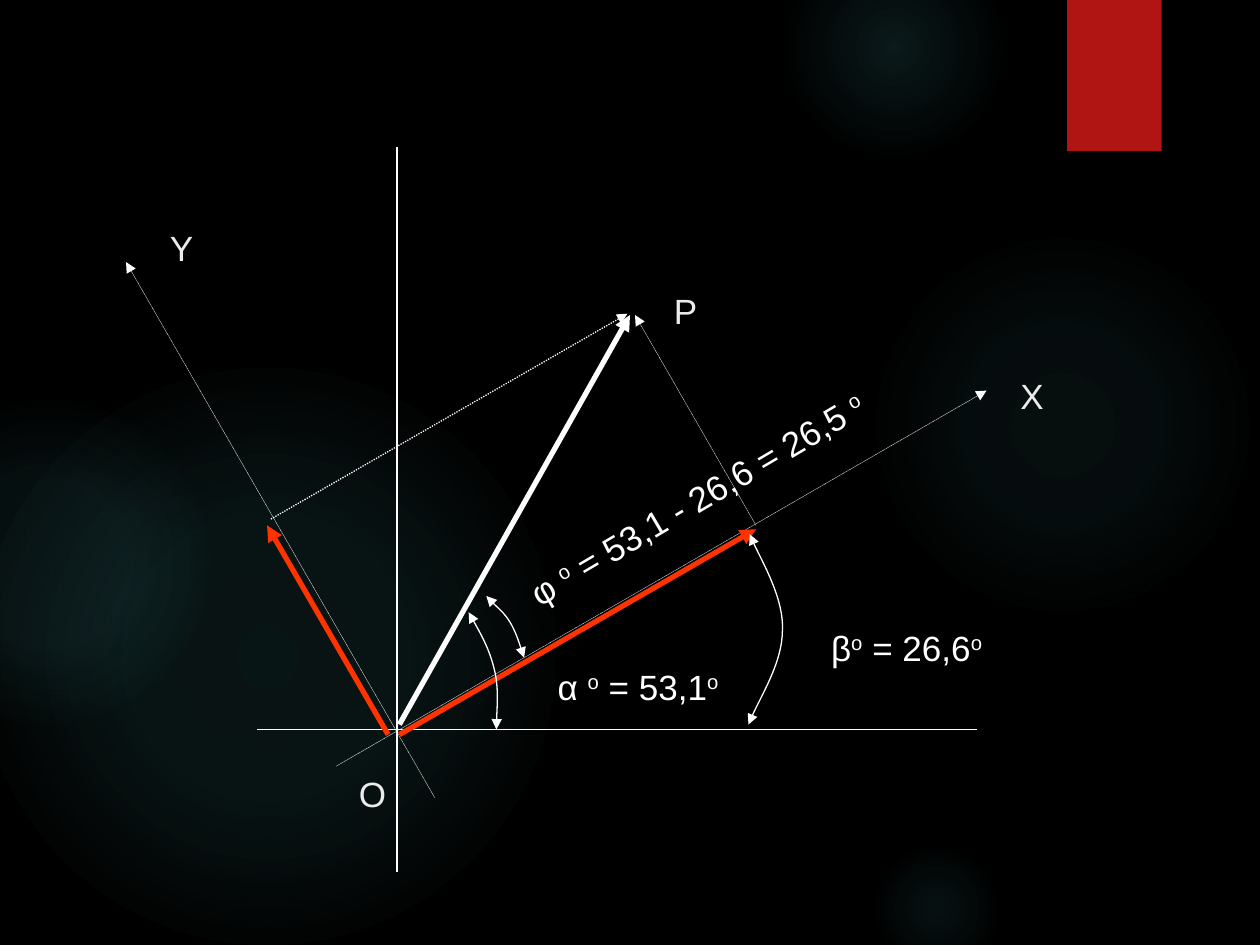
from lxml import etree
from pptx import Presentation
from pptx.dml.color import RGBColor
from pptx.enum.dml import MSO_LINE
from pptx.enum.shapes import MSO_CONNECTOR, MSO_SHAPE
from pptx.enum.text import MSO_AUTO_SIZE, PP_ALIGN
from pptx.oxml import parse_xml
from pptx.oxml.ns import nsdecls, qn
from pptx.util import Inches, Pt

OVAL, RECTANGLE = MSO_SHAPE.OVAL, MSO_SHAPE.RECTANGLE
STRAIGHT = MSO_CONNECTOR.STRAIGHT
DOTTED = MSO_LINE.ROUND_DOT
FIT_SHAPE = MSO_AUTO_SIZE.SHAPE_TO_FIT_TEXT
JUSTIFY = PP_ALIGN.JUSTIFY

COLORS = {"night": "000000", "glow": "50B9C1", "tab": "B01513",
          "white": "FFFFFF", "label": "EBEBEB", "component": "FF3300"}

# Slide grid: 100 columns by 75 rows
COLUMNS, ROWS, CELL = 100, 75, 0.1

# Glows: left, top, diameter, then (position, opacity) stops in percent
GLOWS = [
    (68.9, 18.3, 30.8, [(0, 7), (36, 6), (69, 0)]),
    (62.2, -5, 17.5, [(0, 14), (36, 7), (73, 0)]),
    (68.9, 66.7, 10.8, [(0, 9), (36, 5), (66, 0)]),
    (-1.7, 29.2, 45.8, [(0, 11), (36, 10), (75, 0)]),
    (-9.2, 31.7, 25.8, [(0, 8), (36, 8), (72, 0)]),
]

# Line styles: colour, width in points, dash
STYLES = {
    "rotated axis": ("white", 0.25, DOTTED),
    "projection": ("white", 0.75, DOTTED),
    "fixed axis": ("white", 0.75, None),
    "vector": ("white", 3, None),
    "component": ("component", 3, None),
}

# Lines: style, start, end, whether the end has an arrowhead
LINES = [
    ("rotated axis", (34.5, 63.3), (10, 20.8), True),
    ("rotated axis", (26.7, 60.8), (78.3, 31), True),
    ("vector", (31.7, 57.5), (50, 25), True),
    ("fixed axis", (31.5, 11.7), (31.5, 69.2), False),
    ("fixed axis", (20.4, 57.9), (77.5, 57.9), False),
    ("projection", (21.5, 41.2), (49.8, 24.9), True),
    ("rotated axis", (60, 41.7), (50.4, 25), True),
    ("component", (31.7, 58.3), (60, 42), True),
    ("component", (30.8, 58.3), (21.2, 41.7), True),
]

# Angle arcs: start point, then three points for each curve
ARCS = [
    [(37.2, 48.6), (37.6, 49.3), (38.8, 51.4), (39.2, 53),
     (39.6, 54.5), (39.4, 56.8), (39.4, 57.9)],
    [(59.5, 42.4), (60, 43.7), (62.2, 47.5), (62.1, 50),
     (62.1, 52.5), (60, 55.9), (59.4, 57.5)],
    [(38.6, 47.3), (38.9, 47.7), (40, 48.6), (40.5, 49.4),
     (41, 50.3), (41.4, 51.6), (41.6, 52.2)],
]

POINT_LABELS = [("X", 80, 29.2), ("P", 52.5, 22.5),
                ("Y", 12.5, 17.5), ("O", 27.5, 60.8)]

# Angle labels: parts (every second one is raised), left, top, width, rotation
ANGLE_LABELS = [
    ([" α ", "o", " = 53,1", "o"], 42.5, 52.3, 15.8, 0),
    ([" β", "o", " = 26,6", "o"], 64.2, 49.2, 15.8, 0),
    ([" φ ", "o", " = 53,1 - 26,6 = 26,5 ", "o"], 38.4, 37.3, 34.1, 329.5),
]
LABEL_HEIGHT = 4.3


def grid(*cells):
    return [Inches(cell * CELL) for cell in cells]


def rgb(name):
    return RGBColor.from_string(COLORS[name])


def style_line(line, style, start_arrow=False, end_arrow=False):
    color, width, dash = STYLES[style]
    line.color.rgb = rgb(color)
    line.width = Pt(width)
    if dash:
        line.dash_style = dash
    for tag, wanted in (("a:headEnd", start_arrow), ("a:tailEnd", end_arrow)):
        if wanted:
            etree.SubElement(line._get_or_add_ln(), qn(tag), type="triangle")


def add_block(slide, preset, left, top, width, height):
    block = slide.shapes.add_shape(preset, *grid(left, top, width, height))
    block.shadow.inherit = False
    block.line.fill.background()
    return block


def add_glow(slide, left, top, diameter, stops):
    glow = add_block(slide, OVAL, left, top, diameter, diameter)
    stop_xml = "".join(
        f'<a:gs pos="{position * 1000}"><a:srgbClr val="{COLORS["glow"]}">'
        f'<a:alpha val="{opacity * 1000}"/></a:srgbClr></a:gs>'
        for position, opacity in stops)
    gradient = parse_xml(
        f'<a:gradFill {nsdecls("a")}><a:gsLst>{stop_xml}</a:gsLst>'
        '<a:path path="circle"><a:fillToRect l="50000" t="50000" r="50000" '
        'b="50000"/></a:path></a:gradFill>')
    glow._element.spPr.find(qn("a:prstGeom")).addnext(gradient)


def add_line(slide, style, start, end, arrow):
    line = slide.shapes.add_connector(STRAIGHT, *grid(*start, *end))
    style_line(line.line, style, end_arrow=arrow)
    etree.SubElement(line._element.spPr, qn("a:effectLst"))


def add_arc(slide, points):
    start, *rest = [grid(*point) for point in points]
    builder = slide.shapes.build_freeform(*start)
    builder.add_line_segments(rest, close=False)
    arc = builder.convert_to_shape()
    arc.shadow.inherit = False
    arc.fill.background()
    style_line(arc.line, "fixed axis", start_arrow=True, end_arrow=True)
    # Turn each three segments into one cubic curve
    outline = next(arc._element.iter(qn("a:path")))
    segments = outline.findall(qn("a:lnTo"))
    for first in range(0, len(segments), 3):
        curve = etree.SubElement(outline, qn("a:cubicBezTo"))
        for segment in segments[first:first + 3]:
            curve.append(segment[0])
            outline.remove(segment)


def add_label(slide, parts, left, top, width, color, rotation=0):
    label = slide.shapes.add_textbox(*grid(left, top, width, LABEL_HEIGHT))
    label.rotation = rotation
    label.text_frame.word_wrap = True
    label.text_frame.auto_size = FIT_SHAPE
    paragraph = label.text_frame.paragraphs[0]
    paragraph.alignment = JUSTIFY
    font_format = {"name": "Arial", "size": Pt(20)}
    for index, part in enumerate(parts):
        run = paragraph.add_run()
        run.text = part
        for attribute, value in font_format.items():
            setattr(run.font, attribute, value)
        run.font.color.rgb = rgb(color)
        if index % 2:
            run._r.get_or_add_rPr().set("baseline", "30000")


def main():
    deck = Presentation()
    deck.slide_width, deck.slide_height = grid(COLUMNS, ROWS)
    slide = deck.slides.add_slide(deck.slide_layouts[6])

    # Backdrop
    slide.background.fill.solid()
    slide.background.fill.fore_color.rgb = rgb("night")
    for glow in GLOWS:
        add_glow(slide, *glow)
    tab = add_block(slide, RECTANGLE, 84.7, 0, 7.5, 12)
    tab.fill.solid()
    tab.fill.fore_color.rgb = rgb("tab")

    # Axes, vectors and angles
    for line in LINES:
        add_line(slide, *line)
    for arc in ARCS:
        add_arc(slide, arc)

    # Labels
    for letter, left, top in POINT_LABELS:
        add_label(slide, [letter], left, top, 5, "label")
    for parts, left, top, width, rotation in ANGLE_LABELS:
        add_label(slide, parts, left, top, width, "white", rotation)

    deck.save("out.pptx")


if __name__ == "__main__":
    main()
